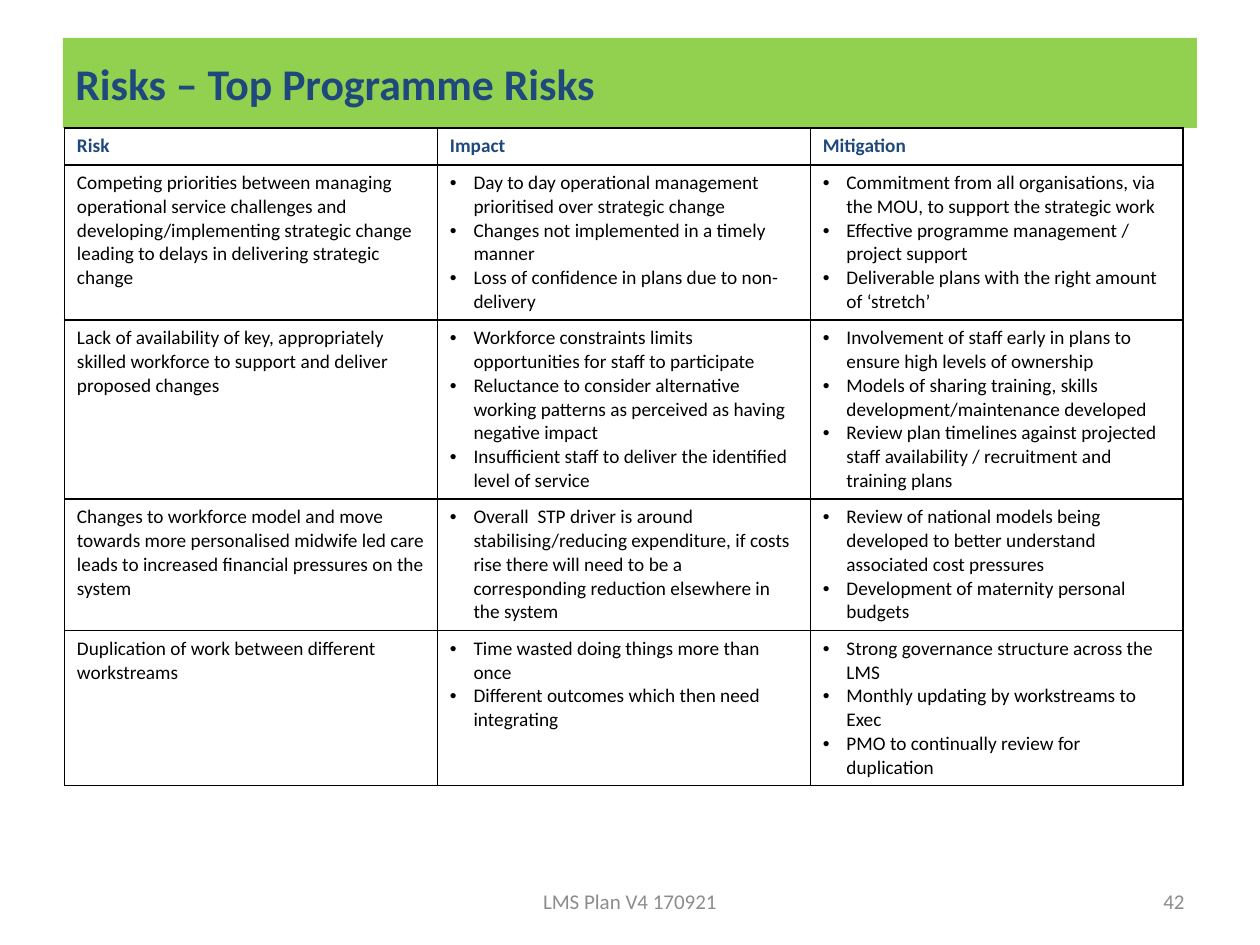
from lxml.etree import SubElement
from pptx import Presentation
from pptx.dml.color import RGBColor
from pptx.enum.shapes import MSO_SHAPE
from pptx.enum.text import MSO_ANCHOR, PP_ALIGN
from pptx.oxml.ns import qn
from pptx.util import Pt

NAVY, GREEN, GREY, BLACK = "1F497D", "92D050", "8C8C8C", "000000"
TITLE = "Risks – Top Programme Risks"
HEADS = ["Risk", "Impact", "Mitigation"]
# Each row: height, risk, impacts, mitigations
RISKS = [
    (88.5, "Competing priorities between managing operational service challenges and "
     "developing/implementing strategic change leading to delays in delivering strategic change",
     ["Day to day operational management prioritised over strategic change",
      "Changes not implemented in a timely manner",
      "Loss of confidence in plans due to non-delivery"],
     ["Commitment from all organisations, via the MOU, to support the strategic work",
      "Effective programme management / project support",
      "Deliverable plans with the right amount of ‘stretch’"]),
    (102, "Lack of availability of key, appropriately skilled workforce to support "
     "and deliver proposed changes",
     ["Workforce constraints limits opportunities for staff to participate",
      "Reluctance to consider alternative working patterns as perceived as having negative impact",
      "Insufficient staff to deliver the identified level of service"],
     ["Involvement of staff early in plans to ensure high levels of ownership",
      "Models of sharing training, skills development/maintenance developed",
      "Review plan timelines against projected staff availability / recruitment "
      "and training plans"]),
    (75, "Changes to workforce model and move towards more personalised midwife led care "
     "leads to increased financial pressures on the system",
     ["Overall  STP driver is around stabilising/reducing expenditure, if costs rise there "
      "will need to be a corresponding reduction elsewhere in the system"],
     ["Review of national models being developed to better understand associated cost pressures",
      "Development of maternity personal budgets"]),
    (88.5, "Duplication of work between different workstreams",
     ["Time wasted doing things more than once",
      "Different outcomes which then need integrating"],
     ["Strong governance structure across the LMS",
      "Monthly updating by workstreams to Exec",
      "PMO to continually review for duplication"]),
]
# Text, left, width, alignment
FOOTERS = [("42", 516, 168, PP_ALIGN.RIGHT),
           ("LMS Plan V4 170921", 246, 228, PP_ALIGN.CENTER)]
HEAD_H, COL_W, INDENT = 21, 213.12, 13.5


def color(code):
    return RGBColor.from_string(code)


def style(para, size, code, bold=False, align=PP_ALIGN.LEFT):
    font = para.font
    font.name, font.size, font.bold = "Calibri", Pt(size), bold
    font.color.rgb = color(code)
    para.alignment = align


def bullet(para):
    props = para._p.get_or_add_pPr()
    props.set("marL", str(Pt(INDENT)))
    props.set("indent", str(-Pt(INDENT)))
    SubElement(props, qn("a:buFont"), typeface="Arial")
    SubElement(props, qn("a:buChar"), char="•")


def border(cell):
    """Draw a black line on all four sides; lines must precede the fill."""
    props = cell._tc.get_or_add_tcPr()
    for spot, side in enumerate(("lnL", "lnR", "lnT", "lnB")):
        line = SubElement(props, qn("a:" + side), w=str(Pt(1)))
        fill = SubElement(line, qn("a:solidFill"))
        SubElement(fill, qn("a:srgbClr"), val=BLACK)
        props.insert(spot, line)


def fill_cell(cell, items, code=BLACK, bold=False):
    """Write a string as plain text, or a list as bullets."""
    listed = isinstance(items, list)
    cell.text = "\n".join(items) if listed else items
    for para in cell.text_frame.paragraphs:
        style(para, 11, code, bold)
        if listed:
            bullet(para)
    cell.fill.background()
    border(cell)


deck = Presentation()
deck.slide_width, deck.slide_height = Pt(720), Pt(540)
slide = deck.slides.add_slide(deck.slide_layouts[6])
shapes = slide.shapes

banner = shapes.add_shape(MSO_SHAPE.RECTANGLE, Pt(36), Pt(21.6), Pt(648), Pt(51.6))
banner.shadow.inherit = False
banner.fill.solid()
banner.fill.fore_color.rgb = color(GREEN)
banner.line.fill.background()
banner.text_frame.text = TITLE
banner.text_frame.vertical_anchor = MSO_ANCHOR.MIDDLE
style(banner.text_frame.paragraphs[0], 25, NAVY, True)

heights = [HEAD_H] + [risk[0] for risk in RISKS]
table = shapes.add_table(len(heights), len(HEADS), Pt(36.8), Pt(73.2),
                         Pt(COL_W * len(HEADS)), Pt(sum(heights))).table
table.first_row = table.horz_banding = False
for col in table.columns:
    col.width = Pt(COL_W)
for row, height in zip(table.rows, heights):
    row.height = Pt(height)
for cell, head in zip(table.rows[0].cells, HEADS):
    fill_cell(cell, head, NAVY, True)
for r, risk in enumerate(RISKS, 1):
    for cell, items in zip(table.rows[r].cells, risk[1:]):
        fill_cell(cell, items)

for text, left, width, align in FOOTERS:
    frame = shapes.add_textbox(Pt(left), Pt(500.5), Pt(width), Pt(28.75)).text_frame
    frame.word_wrap = True
    frame.vertical_anchor = MSO_ANCHOR.MIDDLE
    frame.text = text
    style(frame.paragraphs[0], 12, GREY, align=align)

deck.save("out.pptx")
